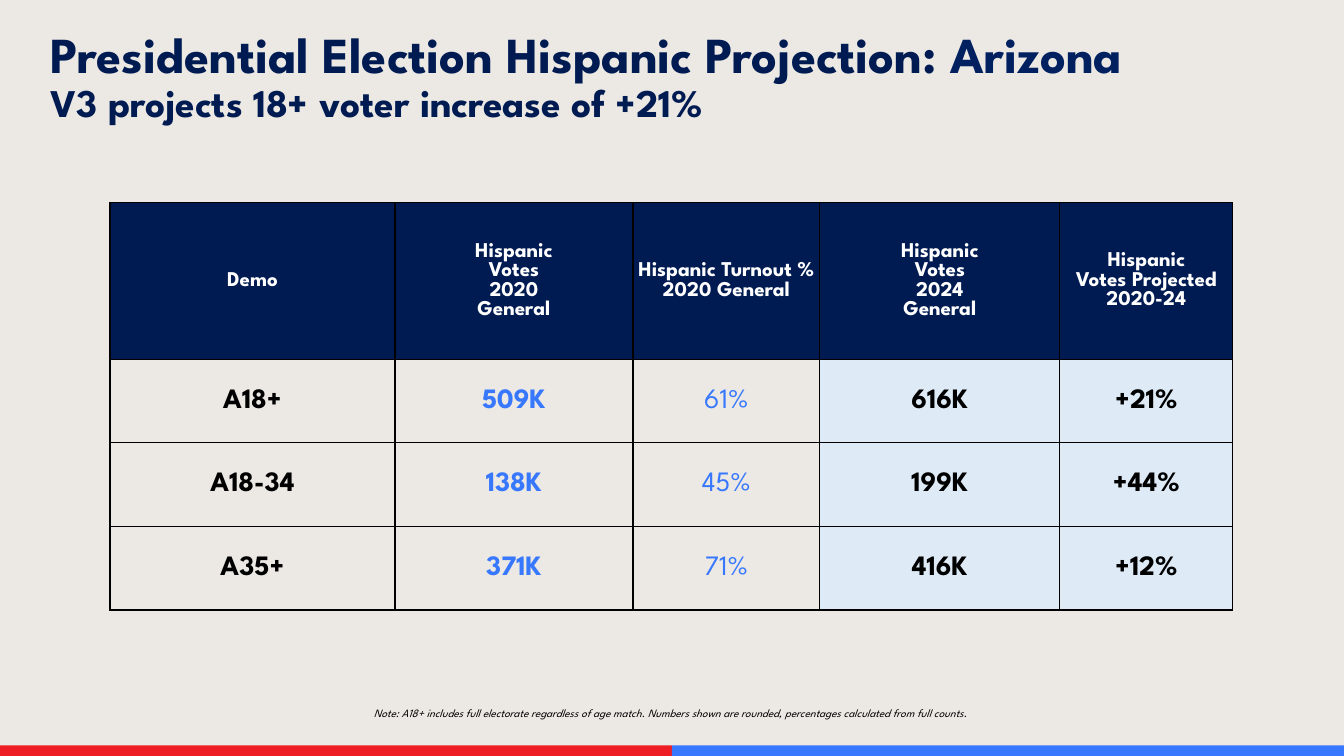
from lxml.etree import SubElement
from pptx import Presentation
from pptx.dml.color import RGBColor
from pptx.enum.shapes import MSO_SHAPE as Shape
from pptx.enum.text import MSO_ANCHOR as Anchor, MSO_AUTO_SIZE as AutoSize, PP_ALIGN as Align
from pptx.oxml.ns import qn
from pptx.util import Pt

WIDTH, HEIGHT = 960, 540
NAVY, TITLE_BLUE, BLUE, RED = "001B52", "002060", "3778FE", "EE1D24"
BLACK, WHITE, PAPER, PALE_BLUE = "000000", "FFFFFF", "ECE9E4", "DEEBF7"

HEADERS = [
    "Demo",
    "Hispanic\nVotes\n2020\nGeneral",
    "Hispanic Turnout % 2020 General",
    "Hispanic\nVotes\n2024\nGeneral",
    "Hispanic\nVotes Projected\n2020-24",
]
ROWS = [
    ["A18+", "509K", "61%", "616K", "+21%"],
    ["A18-34", "138K", "45%", "199K", "+44%"],
    ["A35+", "371K", "71%", "416K", "+12%"],
]
COLUMN_WIDTHS = [203.5, 170, 133.5, 171.5, 123.5]
ROW_HEIGHTS = [112, 59.75, 59.75, 59.75]
# Text colour, bold and fill of each body column
COLUMN_STYLES = [
    (BLACK, True, None),
    (BLUE, True, None),
    (BLUE, False, None),
    (BLACK, True, PALE_BLUE),
    (BLACK, True, PALE_BLUE),
]


def paint(target, color):
    """Give a fill a solid colour, or none."""
    if color is None:
        target.background()
    else:
        target.solid()
        target.fore_color.rgb = RGBColor.from_string(color)


def write(paragraph, text, size, color=NAVY, bold=False, italic=False,
          align=Align.LEFT, font="League Spartan"):
    """Add one formatted run to a paragraph."""
    paragraph.alignment = align
    run = paragraph.add_run()
    run.text = text
    run.font.name, run.font.size = font, Pt(size)
    run.font.bold, run.font.italic = bold, italic
    run.font.color.rgb = RGBColor.from_string(color)


class SlideBuilder:
    """Holds the current slide and its style."""

    def __init__(self, slide):
        self.slide = slide
        paint(slide.background.fill, PAPER)

    def frame(self, shape, insets, anchor=Anchor.TOP, wrap=True):
        frame = shape.text_frame
        frame.auto_size = AutoSize.NONE
        frame.word_wrap = wrap
        frame.vertical_anchor = anchor
        frame.margin_left = frame.margin_right = Pt(insets[0])
        frame.margin_top = frame.margin_bottom = Pt(insets[1])
        return frame.paragraphs[0]

    def bar(self, left, top, width, height, color):
        shape = self.slide.shapes.add_shape(
            Shape.RECTANGLE, Pt(left), Pt(top), Pt(width), Pt(height))
        shape.shadow.inherit = False
        paint(shape.fill, color)
        shape.line.fill.background()

    def title(self, left, top, width, height, parts):
        shape = self.slide.shapes.title
        shape.left, shape.top = Pt(left), Pt(top)
        shape.width, shape.height = Pt(width), Pt(height)
        paragraph = self.frame(shape, (7.2, 3.6))
        paragraph.line_spacing = 0.8
        for text, color in parts:
            write(paragraph, text, 36, color=color, bold=True)

    def text(self, left, top, width, height, text, size, insets=(0, 0),
             anchor=Anchor.TOP, wrap=True, **style):
        box = self.slide.shapes.add_textbox(Pt(left), Pt(top), Pt(width), Pt(height))
        write(self.frame(box, insets, anchor, wrap), text, size, **style)

    def border(self, cell):
        properties = cell._tc.get_or_add_tcPr()
        for side in ("a:lnL", "a:lnR", "a:lnT", "a:lnB"):
            line = SubElement(properties, qn(side), w=str(Pt(1)))
            fill = SubElement(line, qn("a:solidFill"))
            SubElement(fill, qn("a:srgbClr"), val=BLACK)

    def cell(self, cell, text, size, color, bold, fill):
        cell.margin_left = cell.margin_right = cell.margin_top = Pt(0.72)
        cell.margin_bottom = 0
        cell.vertical_anchor = Anchor.MIDDLE
        self.border(cell)
        paint(cell.fill, fill)
        frame = cell.text_frame
        for index, line in enumerate(text.split("\n")):
            paragraph = frame.add_paragraph() if index else frame.paragraphs[0]
            write(paragraph, line, size, color=color, bold=bold, align=Align.CENTER)

    def table(self, left, top):
        table = self.slide.shapes.add_table(
            len(ROW_HEIGHTS), len(COLUMN_WIDTHS), Pt(left), Pt(top),
            Pt(sum(COLUMN_WIDTHS)), Pt(sum(ROW_HEIGHTS))).table
        table.horz_banding = False
        for column, width in zip(table.columns, COLUMN_WIDTHS):
            column.width = Pt(width)
        for row, height in zip(table.rows, ROW_HEIGHTS):
            row.height = Pt(height)
        for column, header in enumerate(HEADERS):
            self.cell(table.cell(0, column), header, 15, WHITE, True, NAVY)
        for row, values in enumerate(ROWS, start=1):
            for column, value in enumerate(values):
                self.cell(table.cell(row, column), value, 20, *COLUMN_STYLES[column])


def main():
    presentation = Presentation()
    presentation.slide_width, presentation.slide_height = Pt(WIDTH), Pt(HEIGHT)
    title_only = presentation.slide_layouts[5]
    builder = SlideBuilder(presentation.slides.add_slide(title_only))

    # Two-colour band along the bottom edge
    for index, color in enumerate((RED, BLUE)):
        builder.bar(index * WIDTH / 2, 532.5, WIDTH / 2, 7.5, color)

    # Projection table
    builder.table(78.6, 144.6)

    # Title and subtitle
    builder.title(28.8, 21.6, 931, 85, [
        ("Presidential Election Hispanic Projection: ", NAVY),
        ("Arizona", TITLE_BLUE),
    ])
    builder.text(36, 55.4, 895, 35.3, "V3 projects 18+ voter increase of +21%", 28,
                 anchor=Anchor.MIDDLE, wrap=False, bold=True)

    # Footnote
    builder.text(210.2, 499.7, 538.6, 19.4,
                 "Note: A18+ includes full electorate regardless of age match. "
                 "Numbers shown are rounded, percentages calculated from full counts.",
                 8, insets=(9.4, 5), color=BLACK, italic=True, align=Align.CENTER)

    presentation.save("out.pptx")


if __name__ == "__main__":
    main()
